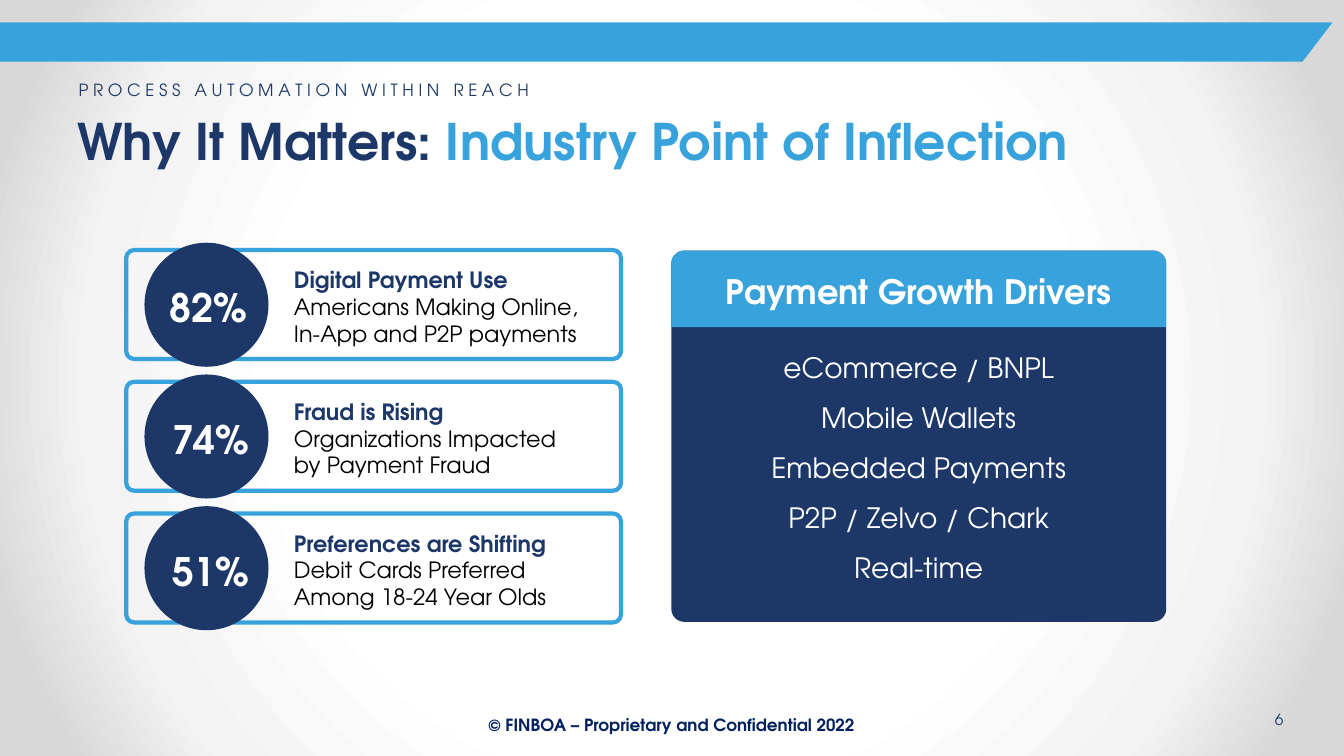
from dataclasses import dataclass
from typing import Optional

from lxml.etree import SubElement
from pptx import Presentation
from pptx.dml.color import RGBColor
from pptx.enum.shapes import MSO_SHAPE
from pptx.enum.text import MSO_ANCHOR, MSO_AUTO_SIZE, PP_ALIGN
from pptx.oxml import parse_xml
from pptx.oxml.ns import nsdecls, qn
from pptx.util import Pt


@dataclass(frozen=True)
class Theme:
    font: str = "TeX Gyre Adventor"
    navy: str = "1D3868"
    sky: str = "37A2DB"
    white: str = "FFFFFF"
    black: str = "000000"
    footer: str = "002060"
    backdrop: tuple = ((0, "FFFFFF"), (50, "FFFFFF"), (76, "F3F3F3"), (92, "D8D8D8"), (100, "D8D8D8"))
    title_size: float = 36
    figure_size: float = 28
    heading_size: float = 24
    list_size: float = 20
    label_size: float = 16
    small_size: float = 12
    number_size: float = 11


@dataclass(frozen=True)
class Box:
    left: float
    top: float
    width: float
    height: float

    def down(self, dy: float) -> "Box":
        return Box(self.left, self.top + dy, self.width, self.height)

    def right(self, dx: float) -> "Box":
        return Box(self.left + dx, self.top, self.width, self.height)

    def lengths(self) -> tuple:
        return Pt(self.left), Pt(self.top), Pt(self.width), Pt(self.height)


@dataclass(frozen=True)
class Stat:
    figure: str
    heading: str
    lines: tuple
    shift: float


T = Theme()
TAGLINE = ("P R O C E S S", "A U T O M A T I O N", "W I T H I N", "R E A C H")
STATS = (
    Stat("82%", "Digital Payment Use", ("Americans Making Online, In-App and P2P payments",), 0),
    Stat("74%", "Fraud is Rising", ("Organizations Impacted", "by Payment Fraud"), 2),
    Stat("51%", "Preferences are Shifting", ("Debit Cards Preferred", "Among 18-24 Year Olds"), 2),
)
DRIVERS = ("eCommerce / BNPL", "Mobile Wallets", "Embedded Payments", "P2P / Zelvo / Chark", "Real-time")
STAT_STEP = 94.1
CARD = Box(90.1, 178.6, 353.5, 77.8)
CIRCLE = Box(103.2, 173.4, 88.6, 88.6)
FIGURE = Box(101.8, 202.5, 93.6, 33.8)
LABEL = Box(210, 190.1, 207.4, 58.3)
PANEL = Box(479.5, 179, 353.5, 265.2)
PANEL_HEAD = Box(479.5, 179, 353.5, 54.7)


def add_run(p, text: str, size: float, color: str, bold: bool = False):
    r = p.add_run()
    r.text = text
    r.font.name, r.font.size, r.font.bold = T.font, Pt(size), bold
    r.font.color.rgb = RGBColor.from_string(color)
    return r


def set_frame(tf, margins: tuple = (0, 0), anchor=MSO_ANCHOR.TOP) -> None:
    tf.word_wrap = True
    tf.auto_size = MSO_AUTO_SIZE.NONE
    tf.margin_left = tf.margin_right = Pt(margins[0])
    tf.margin_top = tf.margin_bottom = Pt(margins[1])
    tf.vertical_anchor = anchor


def add_text(s, box: Box, align=PP_ALIGN.LEFT, margins: tuple = (0, 0), anchor=MSO_ANCHOR.TOP):
    tf = s.shapes.add_textbox(*box.lengths()).text_frame
    set_frame(tf, margins, anchor)
    tf.paragraphs[0].alignment = align
    return tf


def paint(sp, fill: Optional[str], line: Optional[str] = None) -> None:
    sp.shadow.inherit = False
    if fill:
        sp.fill.solid()
        sp.fill.fore_color.rgb = RGBColor.from_string(fill)
    else:
        sp.fill.background()
    if line:
        sp.line.color.rgb = RGBColor.from_string(line)
        sp.line.width = Pt(3)
    else:
        sp.line.fill.background()


def add_shape(s, kind, box: Box, fill: Optional[str], line: Optional[str] = None, adj: tuple = ()):
    sp = s.shapes.add_shape(kind, *box.lengths())
    for i, value in enumerate(adj):
        sp.adjustments[i] = value
    paint(sp, fill, line)
    return sp


def place(sp, box: Box) -> None:
    sp.left, sp.top, sp.width, sp.height = box.lengths()


def add_backdrop(s) -> None:
    stops = "".join(f'<a:gs pos="{pos * 1000}"><a:srgbClr val="{c}"/></a:gs>' for pos, c in T.backdrop)
    s.element.cSld.insert(0, parse_xml(
        f'<p:bg {nsdecls("p", "a")}><p:bgPr><a:gradFill rotWithShape="1"><a:gsLst>{stops}</a:gsLst>'
        '<a:path path="circle"><a:fillToRect l="50000" t="50000" r="50000" b="50000"/></a:path>'
        '</a:gradFill><a:effectLst/></p:bgPr></p:bg>'))


def add_header(s) -> None:
    fb = s.shapes.build_freeform(Pt(0), Pt(16))
    fb.add_line_segments([(Pt(x), Pt(y)) for x, y in ((951.8, 16), (930.5, 44), (0, 44))], close=True)
    paint(fb.convert_to_shape(), T.sky)
    p = add_text(s, Box(49, 51.1, 743, 26.6), margins=(7.2, 3.6)).paragraphs[0]
    p.line_spacing = 1.15
    for i, word in enumerate(TAGLINE):
        if i:
            gap = add_run(p, " ", T.small_size, T.navy)
            gap.font._element.set("spc", "665")
        add_run(p, word, T.small_size, T.navy)
    place(s.shapes.title, Box(48.2, 72.7, 869, 54.7))
    tf = s.shapes.title.text_frame
    set_frame(tf, (7.2, 3.6), MSO_ANCHOR.MIDDLE)
    p = tf.paragraphs[0]
    p.alignment = PP_ALIGN.LEFT
    add_run(p, "Why It Matters: ", T.title_size, T.navy, True)
    add_run(p, "Industry Point of Inflection", T.title_size, T.sky, True)


def add_drivers(s) -> None:
    add_shape(s, MSO_SHAPE.ROUNDED_RECTANGLE, PANEL, T.navy, adj=(0.035,))
    head = add_shape(s, MSO_SHAPE.ROUND_2_SAME_RECTANGLE, PANEL_HEAD, T.sky, adj=(0.167, 0))
    set_frame(head.text_frame, (7.2, 3.6), MSO_ANCHOR.MIDDLE)
    p = head.text_frame.paragraphs[0]
    p.alignment = PP_ALIGN.CENTER
    add_run(p, "Payment Growth Drivers", T.heading_size, T.white, True)
    body = s.placeholders[1]
    s.shapes._spTree.append(body._element)
    place(body, Box(512.6, 250.6, 287.3, 167.8))
    tf = body.text_frame
    set_frame(tf)
    for i, driver in enumerate(DRIVERS):
        p = tf.add_paragraph() if i else tf.paragraphs[0]
        pPr = p._p.get_or_add_pPr()
        pPr.set("marL", "0")
        pPr.set("indent", "0")
        SubElement(pPr, qn("a:buNone"))
        p.alignment = PP_ALIGN.CENTER
        p.space_before = Pt(11.6 if i else 0)
        add_run(p, driver, T.list_size, T.white)


def add_stat(s, stat: Stat, dy: float) -> None:
    add_shape(s, MSO_SHAPE.ROUNDED_RECTANGLE, CARD.down(dy), None, T.sky, (0.073,))
    tf = add_text(s, LABEL.down(dy))
    add_run(tf.paragraphs[0], stat.heading, T.label_size, T.navy, True)
    for line in stat.lines:
        add_run(tf.add_paragraph(), line, T.label_size, T.black)
    add_shape(s, MSO_SHAPE.OVAL, CIRCLE.down(dy), T.navy)
    tf = add_text(s, FIGURE.down(dy).right(stat.shift), PP_ALIGN.CENTER)
    add_run(tf.paragraphs[0], stat.figure, T.figure_size, T.white, True)


def add_footer(s) -> None:
    tf = add_text(s, Box(275.2, 507.6, 409, 22.3), PP_ALIGN.CENTER, (9.4, 5), MSO_ANCHOR.BOTTOM)
    add_run(tf.paragraphs[0], "© FINBOA – Proprietary and Confidential 2022", T.small_size, T.footer, True)
    tf = add_text(s, Box(866.4, 507.4, 50.4, 13.7), PP_ALIGN.RIGHT)
    add_run(tf.paragraphs[0], "6", T.number_size, T.navy)


def main() -> None:
    """Build the payment trends slide and save it."""
    prs = Presentation()
    prs.slide_width, prs.slide_height = Pt(960), Pt(540)
    s = prs.slides.add_slide(prs.slide_layouts[1])
    add_backdrop(s)
    add_header(s)
    add_drivers(s)
    for i, stat in enumerate(STATS):
        add_stat(s, stat, i * STAT_STEP)
    add_footer(s)
    prs.save("out.pptx")


if __name__ == "__main__":
    main()
